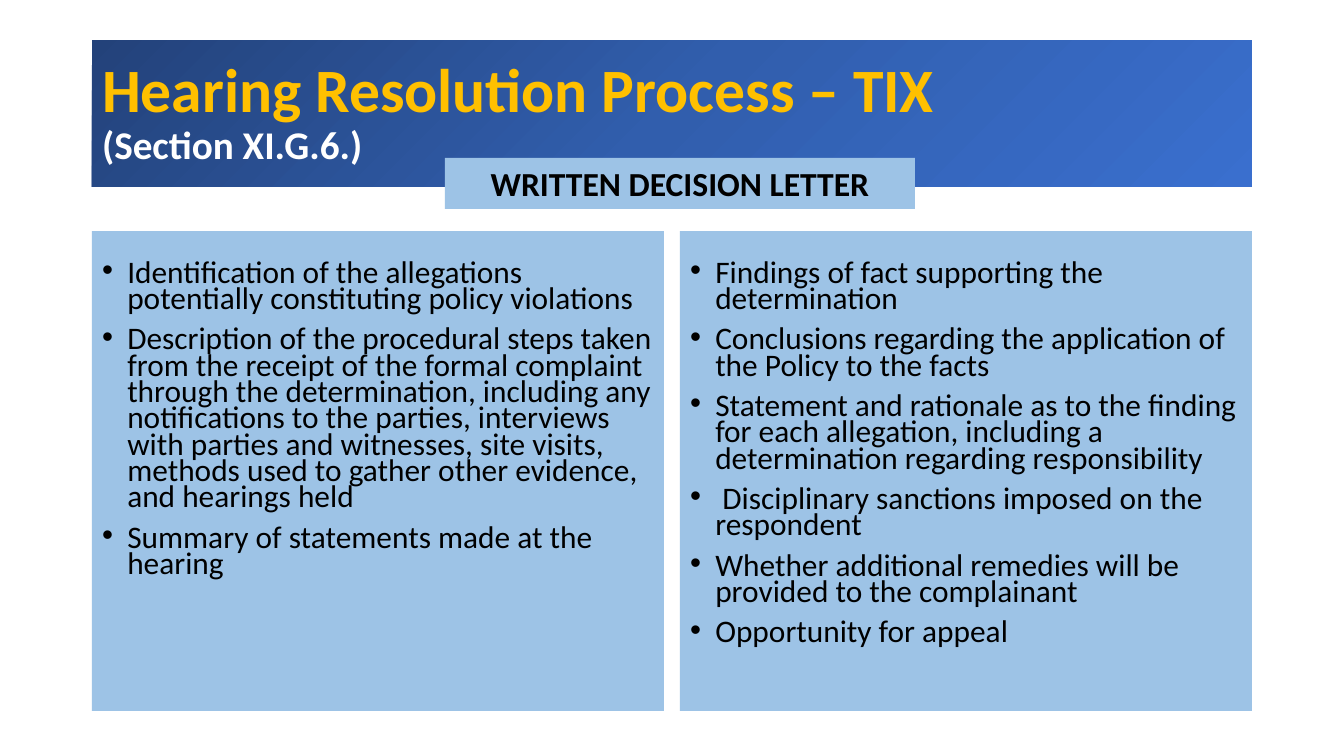
import copy

import pptx
import pptx.dml.color
import pptx.enum.shapes
import pptx.enum.text
import pptx.util

RGB = pptx.dml.color.RGBColor
NAVY = RGB(0x23, 0x42, 0x7A)
ROYAL = RGB(0x31, 0x5E, 0xAD)
AZURE = RGB(0x3A, 0x6F, 0xCE)
SKY = RGB(0x9D, 0xC3, 0xE6)
GOLD = RGB(0xFF, 0xC0, 0x00)
WHITE = RGB(0xFF, 0xFF, 0xFF)
BLACK = RGB(0x00, 0x00, 0x00)

ALIGN = pptx.enum.text.PP_ALIGN
ANCHOR = pptx.enum.text.MSO_ANCHOR
TWO_CONTENT = 3


def px(n):
    return round(n * 914400 / 100.8)


def assign(obj, values):
    for name, value in values.items():
        setattr(obj, name, value)


class Deck:
    font = "Calibri"

    def __init__(self):
        self.prs = pptx.Presentation()
        self.prs.slide_width = px(1344)
        self.prs.slide_height = px(756)
        self.slide = self.prs.slides.add_slide(self.prs.slide_layouts[TWO_CONTENT])

    def place(self, sp, box):
        assign(sp, dict(zip(("left", "top", "width", "height"), map(px, box))))

    def frame(self, sp, anchor, top=5):
        tf = sp.text_frame
        assign(tf, {"word_wrap": True, "auto_size": pptx.enum.text.MSO_AUTO_SIZE.NONE,
                    "vertical_anchor": anchor, "margin_top": px(top)})
        return tf

    def run(self, p, text, size, color, bold=False):
        r = p.add_run()
        r.text = text
        assign(r.font, {"name": self.font, "size": pptx.util.Pt(size), "bold": bold})
        r.font.color.rgb = color

    def solid(self, sp, color):
        sp.fill.solid()
        sp.fill.fore_color.rgb = color

    def gradient(self, sp, colors, angle):
        sp.fill.gradient()
        sp.fill.gradient_angle = angle
        stops = sp._element.xpath(".//a:gsLst")[0]
        while len(stops) < len(colors):
            stops.append(copy.deepcopy(stops[0]))
        for i, (stop, color) in enumerate(zip(sp.fill.gradient_stops, colors)):
            stop.position = i / (len(colors) - 1)
            stop.color.rgb = color

    def title(self, box, heading, section):
        sp = self.slide.shapes.title
        self.place(sp, box)
        self.gradient(sp, (NAVY, ROYAL, AZURE), 315)
        p = self.frame(sp, ANCHOR.MIDDLE).paragraphs[0]
        assign(p, {"alignment": ALIGN.LEFT, "line_spacing": 0.9})
        self.run(p, heading, 44, GOLD, True)
        p.add_line_break()
        self.run(p, section, 28, WHITE, True)

    def bullets(self, idx, box, items):
        sp = self.slide.placeholders[idx]
        self.place(sp, box)
        self.solid(sp, SKY)
        tf = self.frame(sp, ANCHOR.TOP, 31)
        for i, item in enumerate(items):
            p = tf.add_paragraph() if i else tf.paragraphs[0]
            assign(p, {"line_spacing": 0.7, "space_before": pptx.util.Pt(10 if i else 0)})
            pPr = p._p.get_or_add_pPr()
            pPr.set("marL", "228600")
            pPr.set("indent", "-228600")
            self.run(p, item, 22.4, BLACK)

    def label(self, box, text):
        sp = self.slide.shapes.add_shape(pptx.enum.shapes.MSO_SHAPE.RECTANGLE, *map(px, box))
        sp.shadow.inherit = False
        self.solid(sp, SKY)
        sp.line.fill.background()
        p = self.frame(sp, ANCHOR.MIDDLE).paragraphs[0]
        p.alignment = ALIGN.CENTER
        self.run(p, text, 24, BLACK, True)


def main():
    deck = Deck()
    deck.title((92, 40, 1160, 147), "Hearing Resolution Process – TIX", "(Section XI.G.6.)")
    columns = (
        (
            "Identification of the allegations potentially constituting policy violations",
            "Description of the procedural steps taken from the receipt of the formal complaint "
            "through the determination, including any notifications to the parties, interviews "
            "with parties and witnesses, site visits, methods used to gather other evidence, "
            "and hearings held",
            "Summary of statements made at the hearing",
        ),
        (
            "Findings of fact supporting the determination",
            "Conclusions regarding the application of the Policy to the facts",
            "Statement and rationale as to the finding for each allegation, including a "
            "determination regarding responsibility",
            " Disciplinary sanctions imposed on the respondent",
            "Whether additional remedies will be provided to the complainant",
            "Opportunity for appeal",
        ),
    )
    for i, items in enumerate(columns):
        deck.bullets(i + 1, (92 + 588 * i, 231, 572, 480), items)
    deck.label((445, 158, 470, 51), "WRITTEN DECISION LETTER")
    deck.prs.save("out.pptx")


if __name__ == "__main__":
    main()
